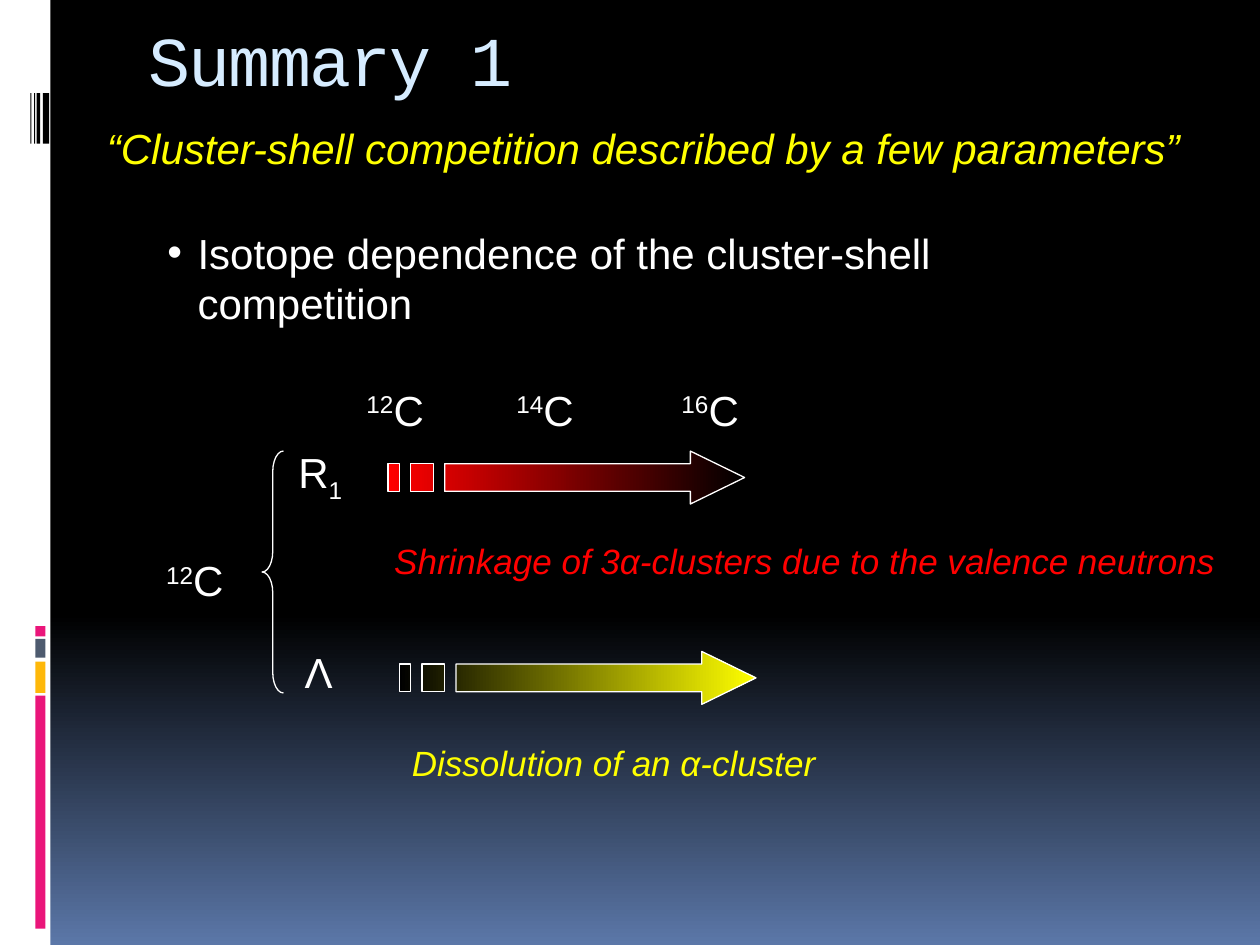
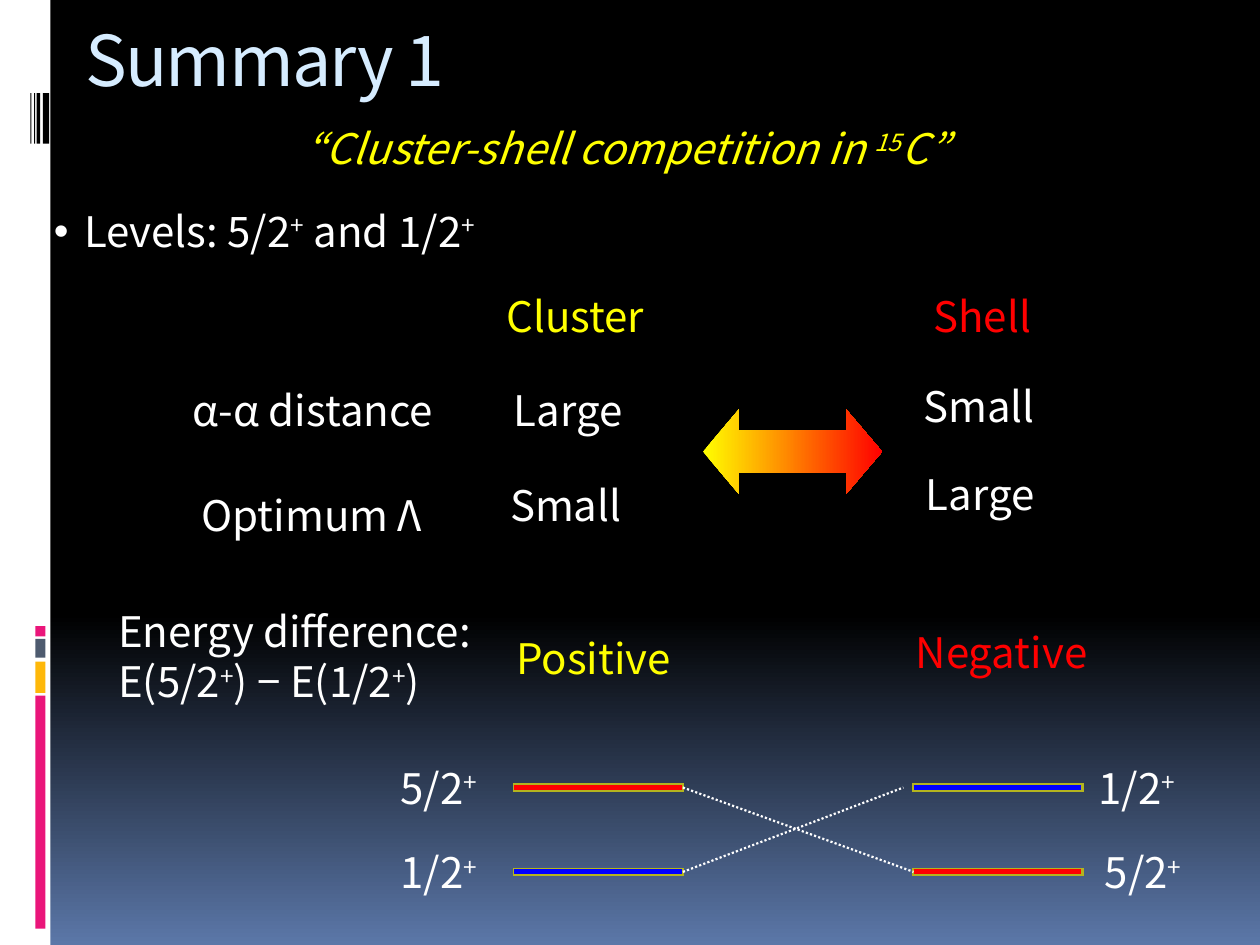
from copy import deepcopy

from lxml.etree import SubElement
from pptx import Presentation
from pptx.dml.color import RGBColor
from pptx.enum.dml import MSO_LINE
from pptx.enum.shapes import MSO_CONNECTOR, MSO_SHAPE
from pptx.enum.text import MSO_ANCHOR, MSO_AUTO_SIZE
from pptx.oxml.ns import qn
from pptx.util import Inches, Pt

COLORS = {
    "white": "FFFFFF", "black": "000000", "title": "D6ECFF", "yellow": "FFFF00",
    "red": "FF0000", "blue": "0000FF", "pink": "EA157A", "amber": "FEB80A",
    "slate": "4E5B6F", "horizon": "5B77A8", "halo": "B4B41E",
}
ARIAL, COURIER, NOTO = "Arial", "Courier New", "Noto Sans CJK JP"
LINE_RATIO = 1.21

# Left edge decoration: left, top, width, height, colour
EDGE_BANDS = [
    (0, 0, 0.4, 7.5, "white"),
    (0.28, 5.52, 0.08, 1.85, "pink"),
    (0.28, 5.25, 0.08, 0.25, "amber"),
    (0.28, 5.07, 0.08, 0.15, "slate"),
    (0.28, 4.97, 0.08, 0.08, "pink"),
    (0.34, 0.74, 0.05, 0.4, "black"),
    (0.29, 0.74, 0.03, 0.4, "black"),
    (0.27, 0.74, 0.01, 0.4, "black"),
    (0.24, 0.74, 0.01, 0.4, "black"),
]


def rgb(name):
    return RGBColor.from_string(COLORS[name])


def fill_gradient(fill, start, end, angle=0):
    fill.gradient()
    fill.gradient_angle = angle
    for stop, position, color in zip(fill.gradient_stops, (0, 1), (start, end)):
        stop.position = position
        stop.color.rgb = rgb(color)


def add_preset(slide, kind, left, top, width, height, adjustments=()):
    shape = slide.shapes.add_shape(
        kind, Inches(left), Inches(top), Inches(width), Inches(height))
    shape.shadow.inherit = False
    shape.line.fill.background()
    for index, value in enumerate(adjustments):
        shape.adjustments[index] = value
    return shape


def outline(shape, color="white", width=0.75):
    shape.line.color.rgb = rgb(color)
    shape.line.width = Pt(width)


def paint_background(slide):
    fill_gradient(slide.background.fill, "black", "horizon", 270)
    # Hold black down to 65 % of the height
    stops = slide.element.find(".//" + qn("a:gsLst"))
    hold = deepcopy(stops[0])
    hold.set("pos", "65000")
    stops.insert(1, hold)


def write_lines(frame, lines, size, font, color, italic=False):
    """Write lines in which ^ toggles superscript and _ toggles subscript."""
    for number, line in enumerate(lines):
        paragraph = frame.add_paragraph() if number else frame.paragraphs[0]
        paragraph.line_spacing = Pt(round(size * LINE_RATIO, 1))
        paragraph.font.size = Pt(size)
        paragraph.font.name = font
        paragraph.font.italic = italic
        paragraph.font.color.rgb = rgb(color)
        mark, baseline = ("_", "-25000") if "_" in line else ("^", "30000")
        for index, piece in enumerate(line.split(mark)):
            if piece:
                run = paragraph.add_run()
                run.text = piece
                if index % 2:
                    run._r.get_or_add_rPr().set("baseline", baseline)


def add_text(slide, left, top, width, *lines, size=24, font=ARIAL,
             color="white", italic=False, wrap=False):
    height = 0.1 + len(lines) * size * LINE_RATIO / 72
    box = slide.shapes.add_textbox(
        Inches(left), Inches(top), Inches(width), Inches(height))
    frame = box.text_frame
    frame.word_wrap = wrap
    frame.auto_size = MSO_AUTO_SIZE.SHAPE_TO_FIT_TEXT
    write_lines(frame, lines, size, font, color, italic)
    return box


def add_bullet(slide, left, top, width, text, font):
    box = add_text(slide, left, top, width, text, font=font, wrap=True)
    properties = box.text_frame.paragraphs[0]._p.get_or_add_pPr()
    indent = Inches(0.24)
    properties.set("marL", str(indent))
    properties.set("indent", str(-indent))
    bullet_font = properties.makeelement(qn("a:buFont"), {"typeface": ARIAL})
    bullet = properties.makeelement(qn("a:buChar"), {"char": "•"})
    defaults = properties.find(qn("a:defRPr"))
    defaults.addprevious(bullet_font)
    defaults.addprevious(bullet)


def add_title(slide, left, text, font):
    box = slide.shapes.add_textbox(
        Inches(left), Inches(0.08), Inches(7.83), Inches(0.75))
    frame = box.text_frame
    frame.word_wrap = True
    frame.vertical_anchor = MSO_ANCHOR.TOP
    write_lines(frame, [text], 40, font, "title")
    frame.paragraphs[0].runs[0]._r.get_or_add_rPr().set("spc", "-100")


def add_striped_arrow(slide, left, top, start, end):
    """Right arrow with two detached tail blocks."""
    high, low, bottom = 0.1, 0.32, 0.42
    head, tip = 2.4, 2.83
    contours = [
        [(head, 0), (head, high), (0.45, high), (0.45, low),
         (head, low), (head, bottom), (tip, bottom / 2)],
        [(0.18, high), (0.18, low), (0.36, low), (0.36, high)],
        [(0, high), (0, low), (0.09, low), (0.09, high)],
    ]
    builder = slide.shapes.build_freeform(Inches(head), 0)
    for number, contour in enumerate(contours):
        points = [(Inches(x), Inches(y)) for x, y in contour]
        if number:
            builder.move_to(*points[0])
        builder.add_line_segments(points[1:], close=True)
    arrow = builder.convert_to_shape(Inches(left), Inches(top))
    arrow.shadow.inherit = False
    fill_gradient(arrow.fill, start, end)
    outline(arrow)


def add_line(slide, start, end, color, width):
    line = slide.shapes.add_connector(
        MSO_CONNECTOR.STRAIGHT, *(Inches(value) for value in start + end))
    outline(line, color, width)
    SubElement(line._element.spPr, qn("a:effectLst"))
    return line


def add_level(slide, left, y, color):
    right = left + 1.33
    add_line(slide, (left - 0.01, y), (right + 0.02, y), "halo", 5)
    add_line(slide, (left, y), (right, y), color, 2.75)


def add_crossing(slide, start, end):
    line = add_line(slide, start, end, "white", 1.25)
    line.line.dash_style = MSO_LINE.ROUND_DOT


def new_slide(presentation, title, title_left, font):
    slide = presentation.slides.add_slide(presentation.slide_layouts[6])
    paint_background(slide)
    for *place, color in EDGE_BANDS:
        band = add_preset(slide, MSO_SHAPE.RECTANGLE, *place)
        band.fill.solid()
        band.fill.fore_color.rgb = rgb(color)
    add_title(slide, title_left, title, font)
    return slide


def build_isotope_slide(presentation):
    slide = new_slide(presentation, "Summary 1", 1.08, COURIER)
    add_text(slide, 0.75, 0.92, 8.82,
             "“Cluster-shell competition described by a few parameters”",
             color="yellow", italic=True)
    add_bullet(slide, 1.23, 1.75, 7.93,
               "Isotope dependence of the cluster-shell competition", ARIAL)

    # Isotope columns and parameter rows
    for left, top, width, label in [
        (2.81, 3, 0.69, "^12^C"), (4, 3, 0.69, "^14^C"), (5.31, 3, 0.69, "^16^C"),
        (2.27, 3.55, 0.57, "R_1_"), (2.32, 5.08, 0.43, "Λ"),
        (1.22, 4.35, 0.69, "^12^C"),
    ]:
        add_text(slide, left, top, width, label)
    brace = add_preset(slide, MSO_SHAPE.LEFT_BRACE, 2.08, 3.58, 0.17, 1.92,
                       (0.958, 0.5))
    brace.fill.background()
    outline(brace)

    # Trends along the isotopes
    add_striped_arrow(slide, 3.08, 3.58, "red", "black")
    add_striped_arrow(slide, 3.17, 5.17, "black", "yellow")
    add_text(slide, 3.03, 4.23, 6.72,
             "Shrinkage of 3α-clusters due to the valence neutrons",
             size=20, color="red", italic=True)
    add_text(slide, 3.17, 5.83, 3.49, "Dissolution of an α-cluster",
             size=20, color="yellow", italic=True)


def build_levels_slide(presentation):
    slide = new_slide(presentation, "Summary 1", 0.58, NOTO)
    add_text(slide, 2.33, 0.92, 6.75, "“Cluster-shell competition in ^15^C”",
             font=NOTO, color="yellow", italic=True, wrap=True)
    add_bullet(slide, 0.33, 1.58, 3.96, "Levels: 5/2^+^ and 1/2^+^", NOTO)

    # Comparison of cluster and shell states
    for left, top, width, label, color in [
        (1.43, 3, 2.24, "α-α distance", "white"),
        (1.5, 3.83, 2.05, "Optimum Λ", "white"),
        (3.92, 2.25, 1.35, "Cluster", "yellow"),
        (7.31, 2.25, 0.99, "Shell", "red"),
        (3.98, 3, 1.12, "Large", "white"),
        (7.23, 2.97, 1.1, "Small", "white"),
        (3.95, 3.75, 1.1, "Small", "white"),
        (7.25, 3.67, 1.12, "Large", "white"),
        (4, 4.97, 1.44, "Positive", "yellow"),
        (7.17, 4.92, 1.64, "Negative", "red"),
        (3.08, 6, 0.95, "5/2^+^", "white"),
        (3.08, 6.67, 0.95, "1/2^+^", "white"),
        (8.62, 6, 0.95, "1/2^+^", "white"),
        (8.67, 6.67, 0.95, "5/2^+^", "white"),
    ]:
        add_text(slide, left, top, width, label, font=NOTO, color=color)
    add_text(slide, 0.84, 4.75, 3.22, "Energy difference:",
             "E(5/2^+^) − E(1/2^+^)", font=NOTO)
    arrow = add_preset(slide, MSO_SHAPE.LEFT_RIGHT_ARROW, 5.58, 3.25, 1.42, 0.67,
                       (0.5, 0.425))
    fill_gradient(arrow.fill, "yellow", "red")

    # Level diagram with the crossing
    upper, lower = 6.25, 6.92
    for left, upper_color, lower_color in [(4.08, "red", "blue"),
                                           (7.25, "blue", "red")]:
        add_level(slide, left, upper, upper_color)
        add_level(slide, left, lower, lower_color)
    add_crossing(slide, (5.42, lower), (7.17, upper))
    add_crossing(slide, (5.42, upper), (7.25, lower))


def main():
    presentation = Presentation()
    presentation.slide_width = Inches(10)
    presentation.slide_height = Inches(7.5)
    build_isotope_slide(presentation)
    build_levels_slide(presentation)
    presentation.save("out.pptx")


if __name__ == "__main__":
    main()
